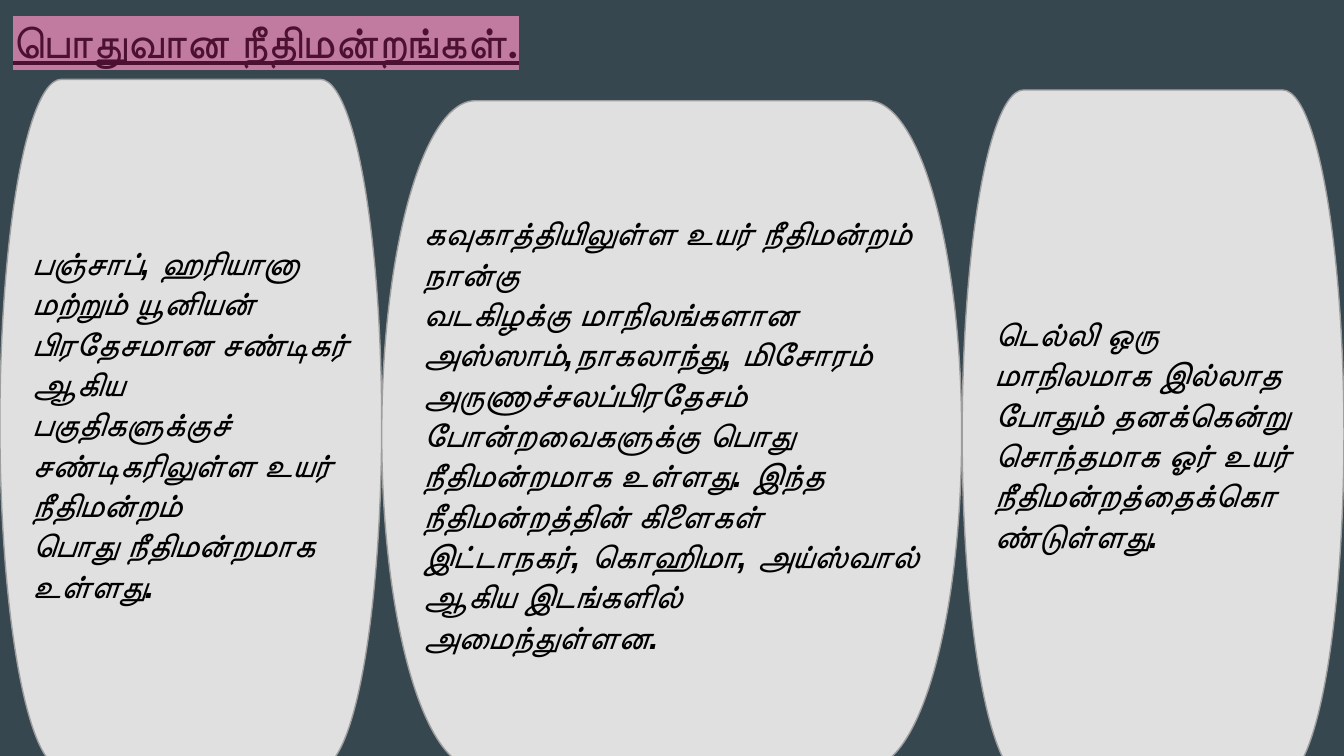
from lxml import etree
from pptx import Presentation
from pptx.dml import color
from pptx.enum import shapes, text
from pptx.oxml import ns
from pptx.util import Pt

COLORS = {
    "background": "37474F",
    "panel": "E0E0E0",
    "border": "9E9E9E",
    "title": "4C1130",
    "highlight": "C27BA0",
    "body": "000000",
}

TITLE = "பொதுவான நீதிமன்றங்கள்."
COURTS = [
    ((0, 42.5, 204.5, 368.6), [
        "பஞ்சாப், ஹரியானா",
        "மற்றும் யூனியன் பிரதேசமான சண்டிகர் ஆகிய",
        "பகுதிகளுக்குச் சண்டிகரிலுள்ள உயர் நீதிமன்றம்",
        "பொது நீதிமன்றமாக உள்ளது.",
    ]),
    ((204.5, 54, 310.7, 357.1), [
        "கவுகாத்தியிலுள்ள உயர் நீதிமன்றம் நான்கு",
        "வடகிழக்கு மாநிலங்களான அஸ்ஸாம்,நாகலாந்து, மிசோரம்",
        "அருணாச்சலப்பிரதேசம்",
        "போன்றவைகளுக்கு பொது நீதிமன்றமாக உள்ளது. இந்த நீதிமன்றத்தின் "
        "கிளைகள் இட்டாநகர், கொஹிமா, அய்ஸ்வால் ஆகிய இடங்களில்",
        "அமைந்துள்ளன.",
    ]),
    ((515.5, 48.2, 204.5, 368.6), [
        "டெல்லி ஒரு மாநிலமாக இல்லாத",
        "போதும் தனக்கென்று சொந்தமாக ஓர் உயர்",
        "நீதிமன்றத்தைக்கொண்டுள்ளது.",
    ]),
]


def rgb(name):
    return color.RGBColor.from_string(COLORS[name])


def write_text(frame, lines, *, size, font, fill, anchor, italic=None,
               underline=None, highlight=None):
    frame.word_wrap = True
    frame.vertical_anchor = anchor
    frame.margin_left = frame.margin_right = Pt(7.2)
    frame.margin_top = frame.margin_bottom = Pt(7.2)
    for index, line in enumerate(lines):
        paragraph = frame.paragraphs[0] if index == 0 else frame.add_paragraph()
        paragraph.alignment = text.PP_ALIGN.LEFT
        paragraph.space_before = Pt(0)
        run = paragraph.add_run()
        run.text = line
        run.font.size = Pt(size)
        run.font.name = font
        run.font.bold = True
        run.font.italic = italic
        run.font.underline = underline
        run.font.color.rgb = rgb(fill)
        properties = run.font._element
        for tag in ("a:ea", "a:cs"):
            etree.SubElement(properties, ns.qn(tag), typeface=font)
        if highlight:
            mark = etree.Element(ns.qn("a:highlight"))
            etree.SubElement(mark, ns.qn("a:srgbClr"), val=COLORS[highlight])
            properties.find(ns.qn("a:solidFill")).addnext(mark)


def place_title(slide, box):
    title = slide.shapes.title
    title.left, title.top, title.width, title.height = map(Pt, box)
    write_text(title.text_frame, [TITLE], size=24, font="Calibri", fill="title",
               anchor=text.MSO_ANCHOR.TOP, underline=True, highlight="highlight")
    title.text_frame.auto_size = text.MSO_AUTO_SIZE.SHAPE_TO_FIT_TEXT


def place_court(slide, box, lines):
    panel = slide.shapes.add_shape(
        shapes.MSO_SHAPE.FLOWCHART_TERMINATOR, *map(Pt, box))
    panel.shadow.inherit = False
    panel.fill.solid()
    panel.fill.fore_color.rgb = rgb("panel")
    panel.line.color.rgb = rgb("border")
    panel.line.width = Pt(0.75)
    write_text(panel.text_frame, lines, size=18, font="Arial", fill="body",
               anchor=text.MSO_ANCHOR.MIDDLE, italic=True)


def main():
    presentation = Presentation()
    presentation.slide_width = Pt(720)
    presentation.slide_height = Pt(405)
    slide = presentation.slides.add_slide(presentation.slide_layouts[5])
    slide.background.fill.solid()
    slide.background.fill.fore_color.rgb = rgb("background")
    place_title(slide, (0, 0, 576, 43.2))
    for box, lines in COURTS:
        place_court(slide, box, lines)
    presentation.save("out.pptx")


if __name__ == "__main__":
    main()
